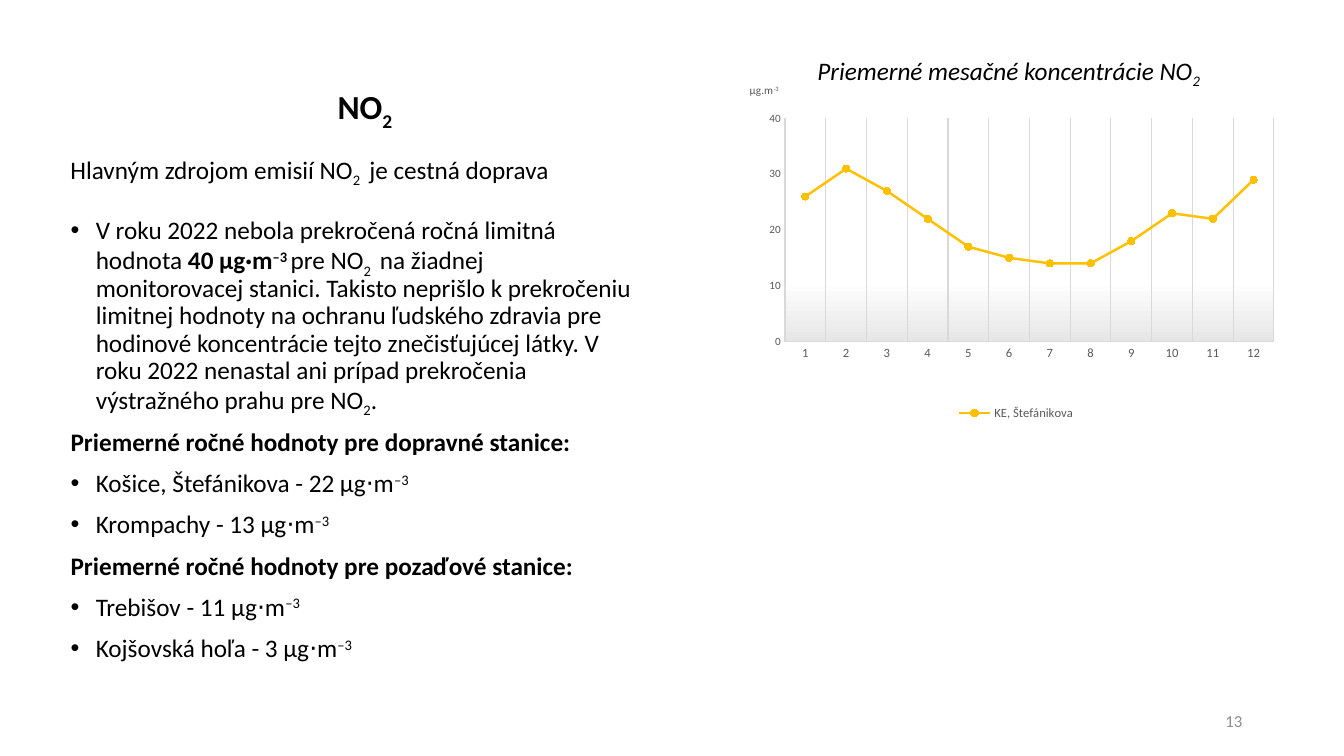
from dataclasses import dataclass

from lxml.etree import SubElement
from pptx import Presentation
from pptx.chart.data import CategoryChartData
from pptx.dml.color import RGBColor
from pptx.enum.chart import XL_CHART_TYPE, XL_LEGEND_POSITION, XL_MARKER_STYLE, XL_TICK_MARK
from pptx.enum.text import MSO_ANCHOR, MSO_AUTO_SIZE, PP_ALIGN
from pptx.oxml import parse_xml
from pptx.oxml.ns import nsdecls, qn
from pptx.util import Inches, Pt


@dataclass(frozen=True)
class Theme:
    font: str = "Calibri"
    black: str = "000000"
    page_grey: str = "8C8C8C"
    label_grey: str = "595959"
    grid_grey: str = "D9D9D9"
    plot_grey: str = "E7E6E6"
    white: str = "FFFFFF"
    gold: str = "FFC000"
    title: int = 24
    body: int = 18
    page: int = 12
    chart: int = 10
    label: int = 9
    small: int = 8


T = Theme()
BOLD = {"bold": True}
ITALIC = {"italic": True}
SUB, SUP = -25000, 30000

# Each paragraph is (bulleted, runs); each run is (text, baseline, format)
UNIT = "μg⋅m"


def heading(text):
    return False, [(text, 0, BOLD)]


def station(name, value):
    return True, [(f"{name} - {value}\u00a0{UNIT}", 0, {}), ("–3", SUP, {})]


BODY = [
    (True, [
        ("V roku 2022 nebola prekročená ročná limitná hodnota ", 0, {}),
        ("40\u00a0µg·m", 0, BOLD), ("–3 ", SUP, BOLD),
        ("pre NO", 0, {}), ("2 ", SUB, {}),
        (" na žiadnej monitorovacej stanici. Takisto neprišlo k prekročeniu limitnej "
         "hodnoty na ochranu ľudského zdravia pre hodinové koncentrácie tejto "
         "znečisťujúcej látky. V roku 2022 nenastal ani prípad prekročenia "
         "výstražného prahu pre NO", 0, {}),
        ("2", SUB, {}), (".", 0, {})]),
    heading("Priemerné ročné hodnoty pre dopravné stanice:"),
    station("Košice, Štefánikova", 22),
    station("Krompachy", 13),
    heading("Priemerné ročné hodnoty pre pozaďové stanice:"),
    station("Trebišov", 11),
    station("Kojšovská hoľa", 3),
]
MONTHLY = [26, 31, 27, 22, 17, 15, 14, 14, 18, 23, 22, 29]


def set_font(font, size, color=T.black, **extra):
    formats = {"name": T.font, "size": Pt(size), "bold": False, "italic": False, **extra}
    for name, value in formats.items():
        setattr(font, name, value)
    font.color.rgb = RGBColor.from_string(color)


def add_runs(p, runs, size, color=T.black):
    for text, baseline, extra in runs:
        r = p.add_run()
        r.text = text
        set_font(r.font, size, color, **extra)
        if baseline:
            r.font._element.set("baseline", str(baseline))


def place(sp, left, top, width, height):
    box = {"left": left, "top": top, "width": width, "height": height}
    for name, value in box.items():
        setattr(sp, name, Inches(value))


def set_frame(tf, anchor):
    formats = {"word_wrap": True, "auto_size": MSO_AUTO_SIZE.NONE, "vertical_anchor": anchor}
    for name, value in formats.items():
        setattr(tf, name, value)


def add_text(s, box, runs, size, color=T.black, align=PP_ALIGN.LEFT, anchor=MSO_ANCHOR.TOP):
    sp = s.shapes.add_textbox(*map(Inches, box))
    set_frame(sp.text_frame, anchor)
    p = sp.text_frame.paragraphs[0]
    p.alignment = align
    add_runs(p, runs, size, color)


def fill_title(sp):
    place(sp, 0.84, 0.65, 5.56, 0.83)
    set_frame(sp.text_frame, MSO_ANCHOR.MIDDLE)
    p = sp.text_frame.paragraphs[0]
    p.alignment = PP_ALIGN.CENTER
    p.line_spacing = 0.9
    add_runs(p, [("NO", 0, BOLD), ("2", SUB, BOLD)], T.title)


def fill_body(sp):
    place(sp, 0.6, 2.11, 5.82, 4.44)
    tf = sp.text_frame
    set_frame(tf, MSO_ANCHOR.TOP)
    for i, (bulleted, runs) in enumerate(BODY):
        p = tf.add_paragraph() if i else tf.paragraphs[0]
        indent = Inches(0.25) if bulleted else 0
        pPr = p._p.get_or_add_pPr()
        pPr.set("marL", str(indent))
        pPr.set("indent", str(-indent))
        if bulleted:
            SubElement(pPr, qn("a:buFont"), typeface="Arial")
            SubElement(pPr, qn("a:buChar"), char="•")
        else:
            SubElement(pPr, qn("a:buNone"))
        p.line_spacing = 0.9
        p.space_before = Pt(10 if i else 0)
        p.alignment = PP_ALIGN.LEFT
        add_runs(p, runs, T.body)


def chart_layout(**values):
    parts = "".join(f'<c:{name} val="{value}"/>' for name, value in values.items())
    return parse_xml(f'<c:layout {nsdecls("c")}><c:manualLayout>{parts}'
                     "</c:manualLayout></c:layout>")


def chart_fill(fill):
    return parse_xml(f'<c:spPr {nsdecls("c", "a")}>{fill}<a:ln><a:noFill/></a:ln></c:spPr>')


def solid(color):
    return f'<a:solidFill><a:srgbClr val="{color}"/></a:solidFill>'


def set_layout(parent, index, layout):
    for old in parent.findall(qn("c:layout")):
        parent.remove(old)
    parent.insert(index, layout)


def set_line(line, color, width):
    line.color.rgb = RGBColor.from_string(color)
    line.width = Pt(width)


def style_axes(chart):
    cat, val = chart.category_axis, chart.value_axis
    for axis, size in ((cat, T.label), (val, T.small)):
        axis.major_tick_mark = axis.minor_tick_mark = XL_TICK_MARK.NONE
        set_font(axis.tick_labels.font, size, T.label_grey)
    cat.has_major_gridlines = True
    set_line(cat.major_gridlines.format.line, T.grid_grey, 0.75)
    set_line(cat.format.line, T.grid_grey, 0.75)
    scale = {"minimum_scale": 0, "maximum_scale": 40, "major_unit": 10,
             "has_major_gridlines": False, "has_title": True}
    for name, value in scale.items():
        setattr(val, name, value)
    val.format.line.fill.background()
    val.tick_labels.number_format = "0"
    val.tick_labels.number_format_is_linked = False
    # Unit label, upright above the value axis
    tf = val.axis_title.text_frame
    tf._txBody.bodyPr.set("rot", "0")
    tf._txBody.bodyPr.set("vert", "horz")
    add_runs(tf.paragraphs[0], [("µg.m", 0, {}), ("-3", SUP, {})], T.small, T.label_grey)
    set_layout(val.axis_title._element, 1,
               chart_layout(xMode="edge", yMode="edge", x=0.01, y=0.04))


def add_monthly_chart(s):
    data = CategoryChartData(number_format="0")
    data.categories = [str(month) for month in range(1, 13)]
    data.add_series("KE, Štefánikova", MONTHLY)
    box = map(Inches, (7.35, 0.64, 5.45, 3.57))
    chart = s.shapes.add_chart(XL_CHART_TYPE.LINE_MARKERS, *box, data).chart
    chart.has_title = False
    set_font(chart.font, T.chart)
    style_axes(chart)

    # Legend
    chart.has_legend = True
    chart.legend.position = XL_LEGEND_POSITION.BOTTOM
    chart.legend.include_in_layout = False
    set_font(chart.legend.font, T.label, T.label_grey)

    # Series
    plot = chart.plots[0]
    plot.vary_by_categories = False
    series = plot.series[0]
    series.smooth = False
    set_line(series.format.line, T.gold, 1.75)
    marker = series.marker
    marker.style, marker.size = XL_MARKER_STYLE.CIRCLE, 5
    marker.format.fill.solid()
    marker.format.fill.fore_color.rgb = RGBColor.from_string(T.gold)
    set_line(marker.format.line, T.gold, 0.75)

    # Backgrounds and plot position
    space = chart._chartSpace
    space.chart.addnext(chart_fill(solid(T.white)))
    area = space.chart.plotArea
    stops = "".join(f'<a:gs pos="{pos}000"><a:srgbClr val="{color}"/></a:gs>'
                    for pos, color in ((0, T.white), (73, T.white), (100, T.plot_grey)))
    area.append(chart_fill(f'<a:gradFill><a:gsLst>{stops}</a:gsLst>'
                           '<a:lin ang="5400000" scaled="0"/></a:gradFill>'))
    set_layout(area, 0, chart_layout(layoutTarget="inner", xMode="edge", yMode="edge",
                                     x=0.08, y=0.15, w=0.89, h=0.62))


def main():
    prs = Presentation()
    prs.slide_width, prs.slide_height = Inches(13.33), Inches(7.5)
    s = prs.slides.add_slide(prs.slide_layouts[1])

    # Left column
    fill_title(s.shapes.title)
    add_text(s, (0.6, 1.48, 5.64, 0.4),
             [("Hlavným zdrojom emisií NO", 0, {}), ("2 ", SUB, {}),
              (" je cestná doprava", 0, {})], T.body)
    fill_body(s.placeholders[1])

    # Right column
    add_monthly_chart(s)
    add_text(s, (6.67, 0.5, 6.67, 0.4),
             [("Priemerné mesačné koncentrácie NO", 0, ITALIC), ("2", SUB, ITALIC)],
             T.body, align=PP_ALIGN.CENTER)

    # Page number
    add_text(s, (9.42, 6.95, 3, 0.4), [("13", 0, {})], T.page, T.page_grey,
             PP_ALIGN.RIGHT, MSO_ANCHOR.MIDDLE)
    prs.save("out.pptx")


if __name__ == "__main__":
    main()
